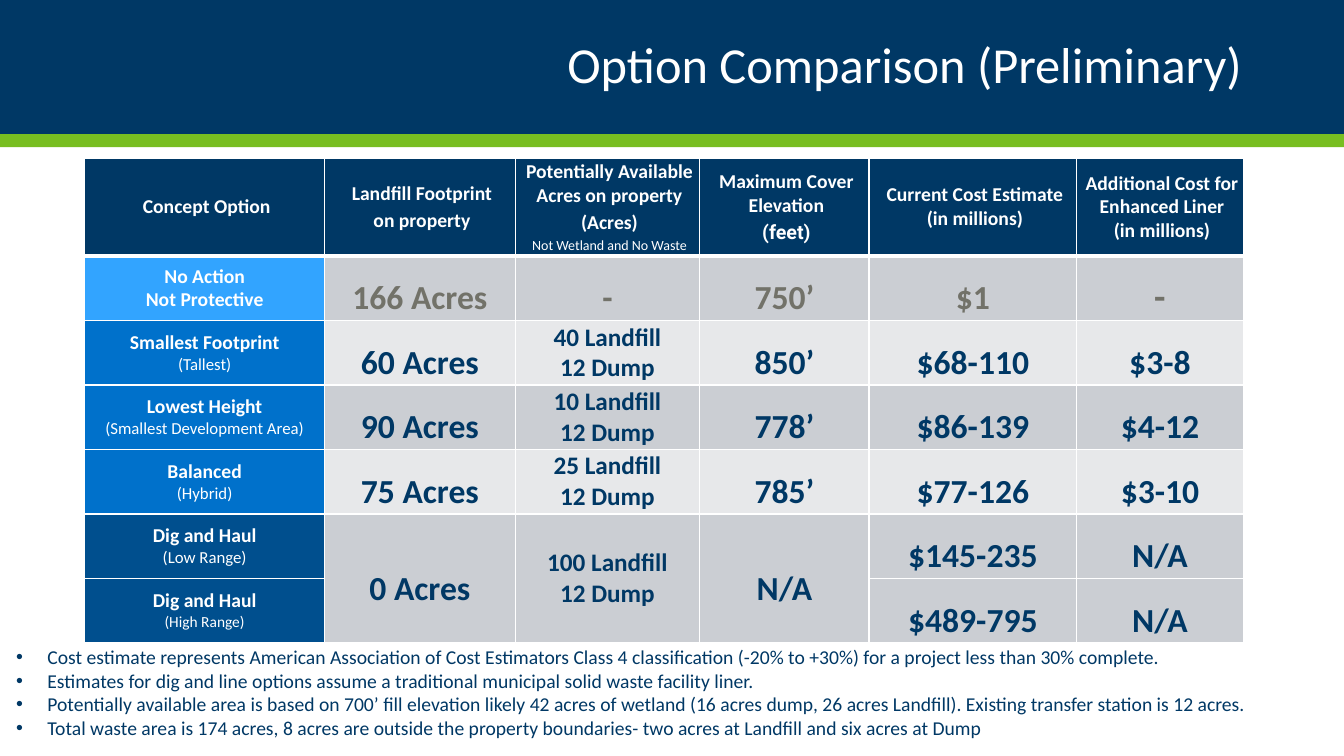
from pptx import Presentation
from pptx.dml.color import RGBColor
from pptx.enum.shapes import MSO_SHAPE
from pptx.enum.text import MSO_ANCHOR, MSO_AUTO_SIZE, PP_ALIGN
from pptx.oxml import parse_xml
from pptx.oxml.ns import nsdecls
from pptx.util import Inches, Pt

HUES = {"navy": "003865", "green": "78BE21", "white": "FFFFFF", "sky": "32A4FF",
        "blue": "0071CB", "deep": "004F8E", "grey": "CBCED3", "pale": "E7E8EA",
        "dim": "727269"}
TITLE = "Option Comparison (Preliminary)"
BANDS = [(0, 1.33, "navy"), (1.33, 0.13, "green")]
HEADS = [
    ["Concept Option"],
    ["Landfill Footprint", "on property"],
    ["Potentially Available Acres on property", "(Acres)", "Not Wetland and No Waste"],
    ["Maximum Cover Elevation", "(feet)"],
    ["Current Cost Estimate\v(in millions)"],
    ["Additional Cost for Enhanced Liner\v(in millions)"],
]
ROWS = [
    (["No Action", "Not Protective"], "sky", "grey", "dim", 14,
     ["166 Acres", "-", "750’", "$1", "-"]),
    (["Smallest Footprint", "(Tallest)"], "blue", "pale", "navy", 12,
     ["60 Acres", ["40 Landfill", "12 Dump"], "850’", "$68-110", "$3-8"]),
    (["Lowest Height", "(Smallest Development Area)"], "blue", "grey", "navy", 12,
     ["90 Acres", ["10 Landfill", "12 Dump"], "778’", "$86-139", "$4-12"]),
    (["Balanced", "(Hybrid)"], "blue", "pale", "navy", 12,
     ["75 Acres", ["25 Landfill", "12 Dump"], "785’", "$77-126", "$3-10"]),
    (["Dig and Haul", "(Low Range)"], "deep", "grey", "navy", 12,
     ["0 Acres", ["100 Landfill", "12 Dump"], "N/A", "$145-235", "N/A"]),
    (["Dig and Haul", "(High Range)"], "deep", "grey", "navy", 11,
     [None, None, None, "$489-795", "N/A"]),
]
NOTES = [
    "Cost estimate represents American Association of Cost Estimators Class 4 classification (-20% to +30%) for a project less than 30% complete.",
    "Estimates for dig and line options assume a traditional municipal solid waste facility liner.",
    "Potentially available area is based on 700’ fill elevation likely 42 acres of wetland (16 acres dump, 26 acres Landfill). Existing transfer station is 12 acres.",
    "Total waste area is 174 acres, 8 acres are outside the property boundaries- two acres at Landfill and six acres at Dump",
]
WIDTHS = [2.38, 1.89, 1.83, 1.68, 2.06, 1.65]
TALLS = [0.97] + [0.64] * 6
SPANS = [1, 2, 3]


def tint(name):
    return RGBColor.from_string(HUES[name])


def place(shape, *box):
    for key, val in zip(("left", "top", "width", "height"), box):
        setattr(shape, key, Inches(val))


def style(para, size, hue, bold=False, face="Calibri"):
    for run in para.runs:
        form = {"size": Pt(size), "bold": bold, "name": face}
        for key, val in form.items():
            setattr(run.font, key, val)
        run.font.color.rgb = tint(hue)


def write(frame, lines):
    for i, line in enumerate(lines):
        para = frame.paragraphs[0] if i == 0 else frame.add_paragraph()
        para.text = line
        yield i, para


def edge(cell, row):
    widths = {"L": 1, "R": 1, "T": 3 if row == 1 else 1, "B": 3 if row == 0 else 1}
    props = cell._tc.get_or_add_tcPr()
    for side, wide in widths.items():
        props.append(parse_xml(
            f'<a:ln{side} {nsdecls("a")} w="{Pt(wide)}"><a:solidFill>'
            f'<a:srgbClr val="{HUES["white"]}"/></a:solidFill></a:ln{side}>'))


def fill_cell(cell, row, hue, side):
    edge(cell, row)
    cell.fill.solid()
    cell.fill.fore_color.rgb = tint(hue)
    form = {"vertical_anchor": MSO_ANCHOR.MIDDLE,
            "margin_left": Inches(side), "margin_right": Inches(side),
            "margin_top": Inches(0.01), "margin_bottom": Inches(0.01)}
    for key, val in form.items():
        setattr(cell, key, val)


def add_bands(slide):
    for i, (top, tall, hue) in enumerate(BANDS):
        band = slide.shapes.add_shape(MSO_SHAPE.RECTANGLE, 0, Inches(top),
                                      Inches(13.33), Inches(tall))
        band.shadow.inherit = False
        band.fill.solid()
        band.fill.fore_color.rgb = tint(hue)
        band.line.fill.background()
        slide.shapes._spTree.insert(2 + i, band._element)


def add_head(table):
    for col, lines in enumerate(HEADS):
        cell = table.cell(0, col)
        fill_cell(cell, 0, "navy", 0.01)
        for i, para in write(cell.text_frame, lines):
            para.alignment = PP_ALIGN.CENTER
            para._p.get_or_add_pPr().set("marL", str(Inches(0.04)))
            para.space_before = Pt(2 if i else 0)
            small = i == 2
            face = "Roboto" if lines[i] == "(feet)" else "Calibri"
            style(para, 10 if small else 14, "white", not small, face)


def add_rows(table):
    for row, (label, shade, back, ink, small, vals) in enumerate(ROWS, 1):
        side = 0.01 if shade == "deep" else 0.06
        for col, val in enumerate([label] + vals):
            cell = table.cell(row, col)
            fill_cell(cell, row, back if col else shade, side)
            if val is None:
                continue
            pair = isinstance(val, list)
            for i, para in write(cell.text_frame, val if pair else [val]):
                para.alignment = PP_ALIGN.CENTER
                if col == 0:
                    size = small if i else 14
                    style(para, size, "white", size == 14)
                elif pair:
                    style(para, 18, ink, True)
                else:
                    para.line_spacing = 1.5
                    face = "Roboto" if val == "-" and col == 5 else "Calibri"
                    style(para, 24, ink, True, face)


def add_grid(slide):
    frame = slide.shapes.add_table(len(TALLS), len(WIDTHS), Inches(0.84), Inches(1.57),
                                   Inches(sum(WIDTHS)), Inches(sum(TALLS)))
    table = frame.table
    for col, wide in zip(table.columns, WIDTHS):
        col.width = Inches(wide)
    for row, tall in zip(table.rows, TALLS):
        row.height = Inches(tall)
    add_head(table)
    add_rows(table)
    for col in SPANS:
        table.cell(5, col).merge(table.cell(6, col))


def add_notes(body):
    place(body, 0.06, 6.35, 12.65, 1.04)
    body.text_frame.auto_size = MSO_AUTO_SIZE.NONE
    for i, para in write(body.text_frame, NOTES):
        props = para._p.get_or_add_pPr()
        props.set("marL", str(Inches(0.31)))
        props.set("indent", str(Inches(-0.31)))
        props.append(parse_xml(f'<a:buFont {nsdecls("a")} typeface="Arial"/>'))
        props.append(parse_xml(f'<a:buChar {nsdecls("a")} char="•"/>'))
        para.space_before = Pt(0)
        style(para, 14, "navy")


def main():
    deck = Presentation()
    deck.slide_width, deck.slide_height = Inches(13.33), Inches(7.5)
    slide = deck.slides.add_slide(deck.slide_layouts[1])
    add_bands(slide)
    title = slide.shapes.title
    place(title, 0.92, 0.17, 11.5, 1)
    title.text_frame.vertical_anchor = MSO_ANCHOR.MIDDLE
    for i, para in write(title.text_frame, [TITLE]):
        para.alignment = PP_ALIGN.RIGHT
        para.line_spacing = 0.9
        style(para, 36, "white")
    add_grid(slide)
    add_notes(slide.placeholders[1])
    deck.save("out.pptx")


if __name__ == "__main__":
    main()
